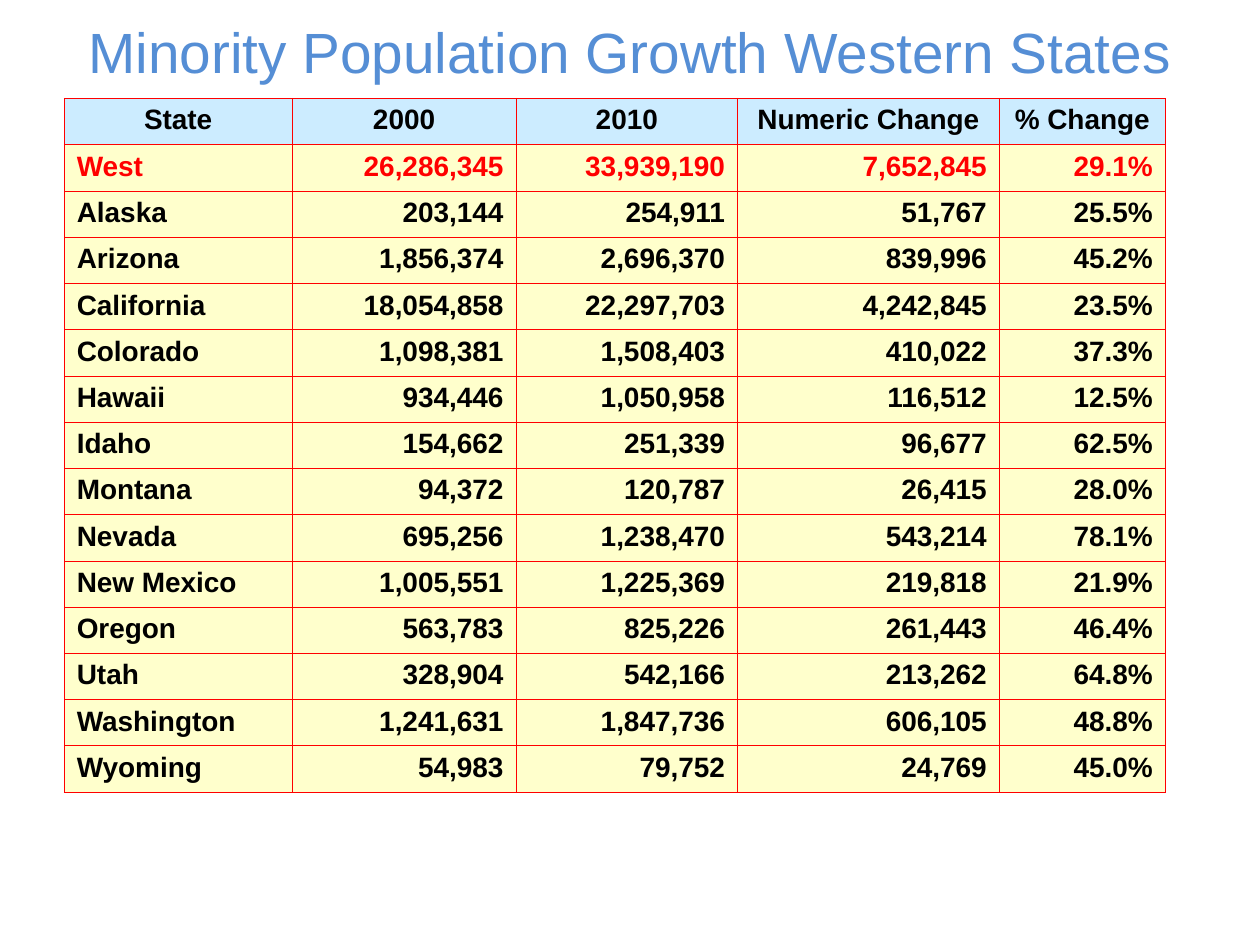
from lxml.etree import SubElement
from pptx import Presentation
from pptx.dml.color import RGBColor
from pptx.enum.text import MSO_ANCHOR, PP_ALIGN
from pptx.oxml.ns import qn
from pptx.util import Inches, Pt

COLORS = {
    "title": "558ED5",
    "header": "CCECFF",
    "body": "FFFFCC",
    "text": "000000",
    "accent": "FF0000",
}
FONT = "Arial"
HEADER = ["State", "2000", "2010", "Numeric Change", "% Change"]
STATES = [
    ["West", "26,286,345", "33,939,190", "7,652,845", "29.1%"],
    ["Alaska", "203,144", "254,911", "51,767", "25.5%"],
    ["Arizona", "1,856,374", "2,696,370", "839,996", "45.2%"],
    ["California", "18,054,858", "22,297,703", "4,242,845", "23.5%"],
    ["Colorado", "1,098,381", "1,508,403", "410,022", "37.3%"],
    ["Hawaii", "934,446", "1,050,958", "116,512", "12.5%"],
    ["Idaho", "154,662", "251,339", "96,677", "62.5%"],
    ["Montana", "94,372", "120,787", "26,415", "28.0%"],
    ["Nevada", "695,256", "1,238,470", "543,214", "78.1%"],
    ["New Mexico", "1,005,551", "1,225,369", "219,818", "21.9%"],
    ["Oregon", "563,783", "825,226", "261,443", "46.4%"],
    ["Utah", "328,904", "542,166", "213,262", "64.8%"],
    ["Washington", "1,241,631", "1,847,736", "606,105", "48.8%"],
    ["Wyoming", "54,983", "79,752", "24,769", "45.0%"],
]
COL_WIDTHS = [1.81, 1.78, 1.76, 2.08, 1.32]
HEADER_HEIGHT = 0.37
SHORT_HEIGHT = 0.34
SHORT_STATE = "Washington"


def rgb(name):
    return RGBColor.from_string(COLORS[name])


def add_run(p, text, size, color, bold=False):
    r = p.add_run()
    r.text = text
    r.font.name = FONT
    r.font.size = Pt(size)
    r.font.bold = bold
    r.font.color.rgb = rgb(color)


def set_borders(cell, color):
    tcPr = cell._tc.get_or_add_tcPr()
    for i, side in enumerate(("a:lnL", "a:lnR", "a:lnT", "a:lnB")):
        ln = SubElement(tcPr, qn(side), w=str(Pt(0.5)))
        fill = SubElement(ln, qn("a:solidFill"))
        SubElement(fill, qn("a:srgbClr"), val=COLORS[color])
        tcPr.remove(ln)
        tcPr.insert(i, ln)


def add_title(s, left, top, width, height):
    box = s.shapes.add_textbox(Inches(left), Inches(top), Inches(width), Inches(height))
    tf = box.text_frame
    tf.word_wrap = True
    tf.vertical_anchor = MSO_ANCHOR.MIDDLE
    tf.margin_top = tf.margin_bottom = 0
    p = tf.paragraphs[0]
    p.alignment = PP_ALIGN.CENTER
    add_run(p, "Minority Population Growth Western States", 32.4, "title")


def add_population_table(s, left, top, width, height):
    rows = [HEADER] + STATES
    table = s.shapes.add_table(
        len(rows), len(HEADER), Inches(left), Inches(top), Inches(width), Inches(height)
    ).table
    table.horz_banding = False
    for column, share in zip(table.columns, COL_WIDTHS):
        column.width = Inches(width * share / sum(COL_WIDTHS))
    row_height = (height - HEADER_HEIGHT - SHORT_HEIGHT) / (len(rows) - 2)
    heights = {HEADER[0]: HEADER_HEIGHT, SHORT_STATE: SHORT_HEIGHT}
    for i, values in enumerate(rows):
        table.rows[i].height = Inches(heights.get(values[0], row_height))
        for j, value in enumerate(values):
            cell = table.cell(i, j)
            cell.fill.solid()
            cell.fill.fore_color.rgb = rgb("body" if i else "header")
            set_borders(cell, "accent")
            p = cell.text_frame.paragraphs[0]
            if i == 0:
                p.alignment = PP_ALIGN.CENTER
            else:
                p.alignment = PP_ALIGN.RIGHT if j else PP_ALIGN.LEFT
            add_run(p, value, 16, "accent" if i == 1 else "text", bold=True)


def main():
    prs = Presentation()
    prs.slide_width, prs.slide_height = Inches(10), Inches(7.5)
    s = prs.slides.add_slide(prs.slide_layouts[6])
    add_title(s, 0, 0.23, 10, 0.34)
    add_population_table(s, 0.51, 0.78, 8.74, 5.45)
    prs.save("out.pptx")


if __name__ == "__main__":
    main()
